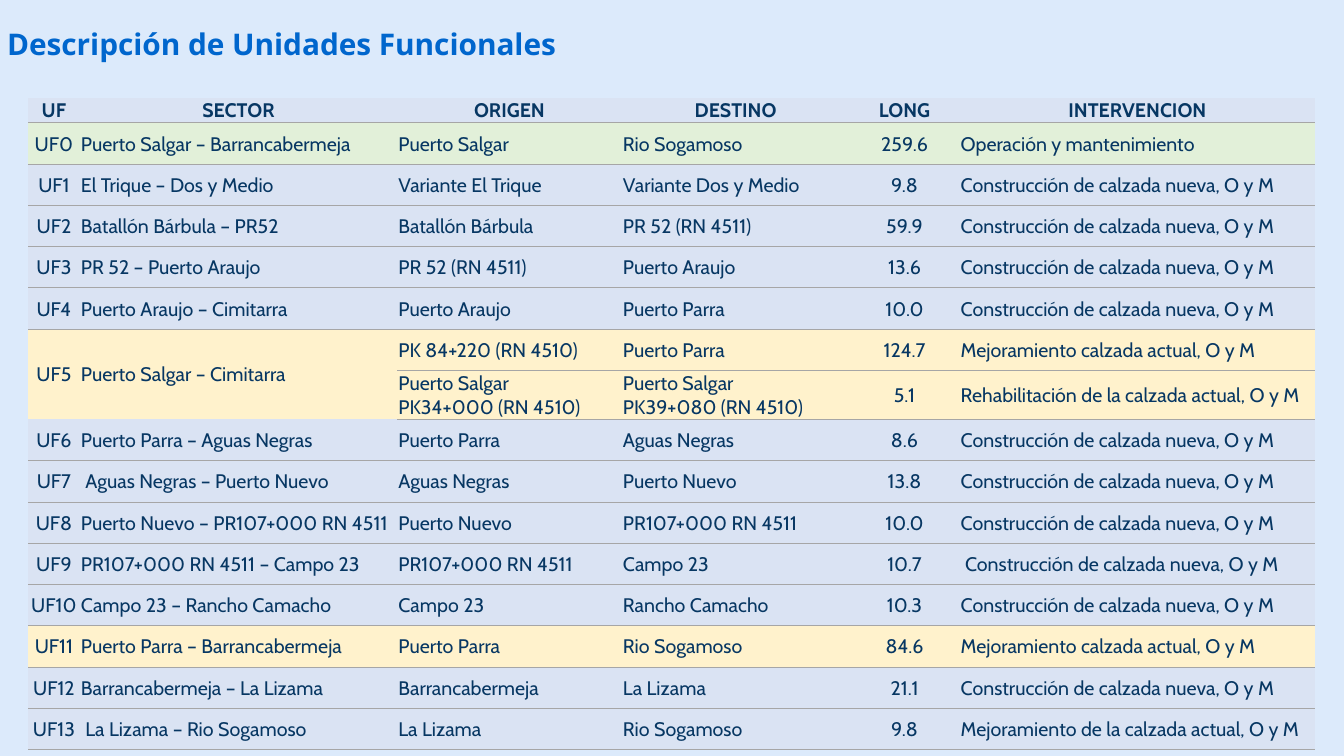
from lxml.etree import SubElement
from pptx import Presentation
from pptx.dml.color import RGBColor
from pptx.enum.text import MSO_ANCHOR as Anchor, MSO_AUTO_SIZE as AutoSize, PP_ALIGN as Align
from pptx.oxml.ns import qn
from pptx.util import Cm, Pt

COLORS = {
    "background": "DCEAFB",
    "title": "0066CD",
    "text": "073763",
    "rule": "A6A6A6",
    "blue": "DAE3F3",
    "green": "E2F0D9",
    "yellow": "FFF2CC",
}
NO_GRID_STYLE = "{2D5ABB26-0587-4C30-8999-92F81FD0307C}"
COLUMN_WIDTHS = [1.3, 8.0, 5.66, 5.74, 2.77, 8.97]
HEADER_HEIGHT, ROW_HEIGHT, TALL_HEIGHT = 0.6, 1.04, 1.18
CENTERED_COLUMNS = (0, 4)
MERGED_COLUMNS = (0, 1)
MERGED_ROW = 6

NEW_ROAD = "Construcción de calzada nueva, O y M"
UPGRADE = "Mejoramiento calzada actual, O y M"
HEADER = ("UF", "SECTOR", "ORIGEN", "DESTINO", "LONG", "INTERVENCION")
UNITS = [
    ("green", "UF0", "Puerto Salgar – Barrancabermeja", "Puerto Salgar", "Rio Sogamoso", "259.6",
     "Operación y mantenimiento"),
    ("blue", "UF1", "El Trique – Dos y Medio", "Variante El Trique", "Variante Dos y Medio", "9.8", NEW_ROAD),
    ("blue", "UF2", "Batallón Bárbula – PR52", "Batallón Bárbula", "PR 52 (RN 4511)", "59.9", NEW_ROAD),
    ("blue", "UF3", "PR 52 – Puerto Araujo", "PR 52 (RN 4511)", "Puerto Araujo", "13.6", NEW_ROAD),
    ("blue", "UF4", "Puerto Araujo – Cimitarra", "Puerto Araujo", "Puerto Parra", "10.0", NEW_ROAD),
    ("yellow", "UF5", "Puerto Salgar – Cimitarra", "PK 84+220 (RN 4510)", "Puerto Parra", "124.7", UPGRADE),
    ("yellow", "", "", "Puerto Salgar\nPK34+000 (RN 4510)", "Puerto Salgar\nPK39+080 (RN 4510)", "5.1",
     "Rehabilitación de la calzada actual, O y M"),
    ("blue", "UF6", "Puerto Parra – Aguas Negras", "Puerto Parra", "Aguas Negras", "8.6", NEW_ROAD),
    ("blue", "UF7", " Aguas Negras – Puerto Nuevo", "Aguas Negras", "Puerto Nuevo", "13.8", NEW_ROAD),
    ("blue", "UF8", "Puerto Nuevo – PR107+000 RN 4511", "Puerto Nuevo", "PR107+000 RN 4511", "10.0", NEW_ROAD),
    ("blue", "UF9", "PR107+000 RN 4511 – Campo 23", "PR107+000 RN 4511", "Campo 23", "10.7", " " + NEW_ROAD),
    ("blue", "UF10", "Campo 23 – Rancho Camacho", "Campo 23", "Rancho Camacho", "10.3", NEW_ROAD),
    ("yellow", "UF11", "Puerto Parra – Barrancabermeja", "Puerto Parra", "Rio Sogamoso", "84.6", UPGRADE),
    ("blue", "UF12", "Barrancabermeja – La Lizama", "Barrancabermeja", "La Lizama", "21.1", NEW_ROAD),
    ("blue", "UF13", " La Lizama – Rio Sogamoso", "La Lizama", "Rio Sogamoso", "9.8",
     "Mejoramiento de la calzada actual, O y M"),
]


def color(name):
    return RGBColor.from_string(COLORS[name])


def format_text(frame, font_name, size, color_name, bold, align):
    for para in frame.paragraphs:
        para.alignment = align
        for span in para.runs:
            span.font.name = font_name
            span.font.size = Pt(size)
            span.font.bold = bold
            span.font.color.rgb = color(color_name)


def set_title(page, text):
    title = page.shapes.title
    title.left, title.top, title.width, title.height = Cm(0), Cm(0.25), Cm(22.89), Cm(1.83)
    frame = title.text_frame
    frame.text = text
    frame.auto_size = AutoSize.NONE
    frame.word_wrap = True
    frame.vertical_anchor = Anchor.MIDDLE
    frame.margin_left = frame.margin_right = Cm(0.18)
    frame.margin_top = frame.margin_bottom = Cm(0.1)
    frame.paragraphs[0].line_spacing = 0.9
    format_text(frame, "Noto Sans", 21.3, "title", True, Align.LEFT)


def add_bottom_rule(cell):
    properties = cell._tc.get_or_add_tcPr()
    line = SubElement(properties, qn("a:lnB"), w=str(Pt(0.5)))
    fill = SubElement(line, qn("a:solidFill"))
    SubElement(fill, qn("a:srgbClr"), val=COLORS["rule"])
    properties.insert(0, line)


def fill_cell(cell, text, tone, bold, align):
    cell.text_frame.text = text
    cell.vertical_anchor = Anchor.MIDDLE
    cell.margin_left = cell.margin_right = cell.margin_top = Cm(0.03)
    cell.margin_bottom = Cm(0)
    cell.fill.solid()
    cell.fill.fore_color.rgb = color(tone)
    format_text(cell.text_frame, "Cabin", 14, "text", bold, align)


def add_units_table(page):
    rows = [("blue", *HEADER), *UNITS]
    heights = [HEADER_HEIGHT] + [ROW_HEIGHT] * len(UNITS)
    heights[MERGED_ROW + 1] = TALL_HEIGHT
    table = page.shapes.add_table(len(rows), len(HEADER), Cm(0.71), Cm(2.46),
                                  Cm(sum(COLUMN_WIDTHS)), Cm(sum(heights))).table
    table.horz_banding = False
    table._tbl.tblPr.find(qn("a:tableStyleId")).text = NO_GRID_STYLE
    for column, width in zip(table.columns, COLUMN_WIDTHS):
        column.width = Cm(width)
    for row_index, (tone, *texts) in enumerate(rows):
        table.rows[row_index].height = Cm(heights[row_index])
        is_header = row_index == 0
        for column_index, text in enumerate(texts):
            cell = table.cell(row_index, column_index)
            centered = is_header or column_index in CENTERED_COLUMNS
            fill_cell(cell, text, tone, is_header, Align.CENTER if centered else Align.LEFT)
            in_merge = column_index in MERGED_COLUMNS and row_index in (MERGED_ROW, MERGED_ROW + 1)
            if not in_merge:
                add_bottom_rule(cell)
    for column_index in MERGED_COLUMNS:
        table.cell(MERGED_ROW, column_index).merge(table.cell(MERGED_ROW + 1, column_index))


def main():
    deck = Presentation()
    deck.slide_width, deck.slide_height = Cm(33.87), Cm(19.05)
    page = deck.slides.add_slide(deck.slide_layouts[5])
    page.background.fill.solid()
    page.background.fill.fore_color.rgb = color("background")
    set_title(page, "Descripción de Unidades Funcionales")
    add_units_table(page)
    deck.save("out.pptx")


if __name__ == "__main__":
    main()
